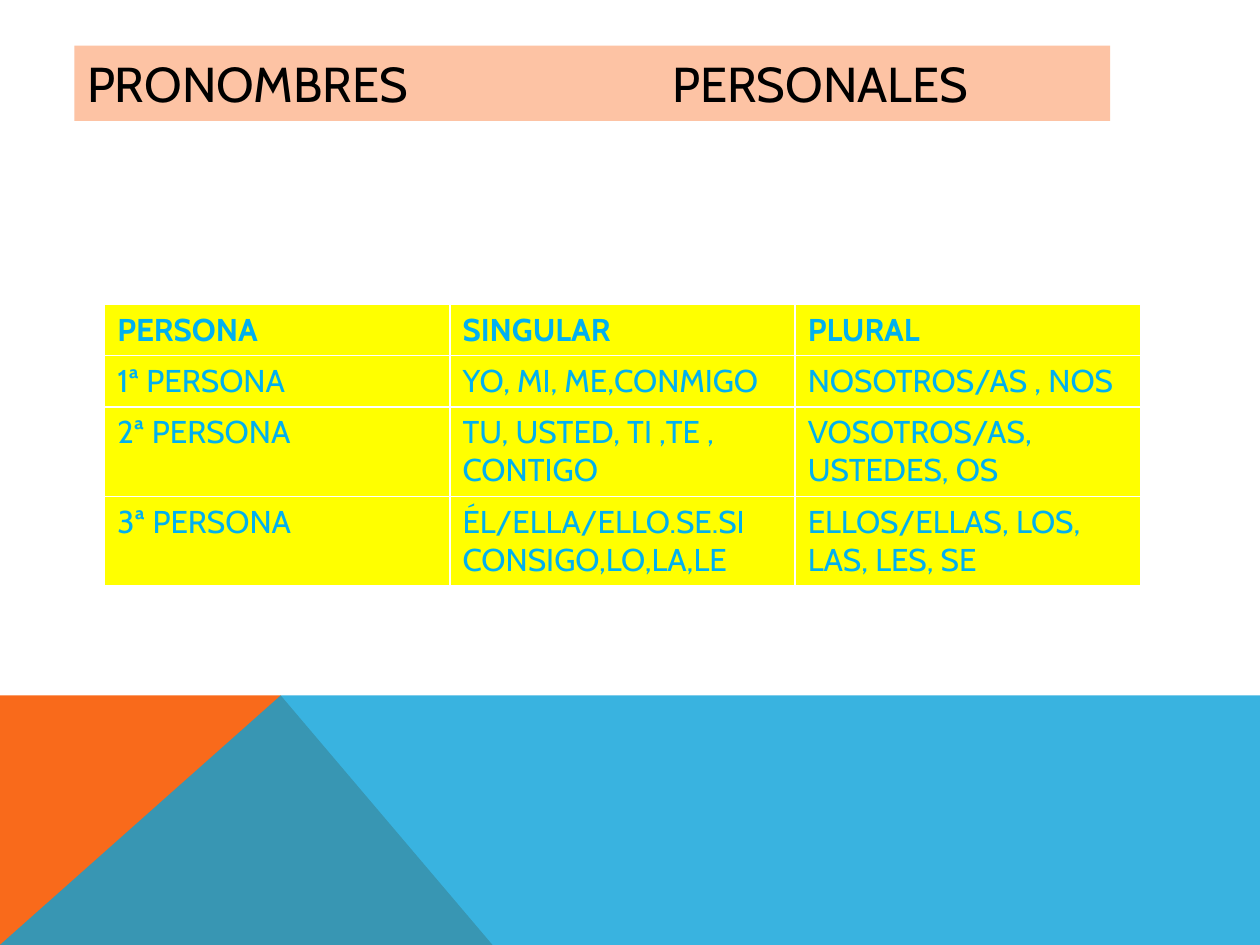
"""Build a slide with a table of Spanish personal pronouns."""
from dataclasses import dataclass

import lxml.etree
import pptx
import pptx.dml.color
import pptx.enum.text
import pptx.oxml.ns
import pptx.util

Cm = pptx.util.Cm
Pt = pptx.util.Pt
qn = pptx.oxml.ns.qn


@dataclass(frozen=True)
class Theme:
    font: str = "Cabin"
    head: int = 28
    body: int = 18
    black: str = "000000"
    peach: str = "FDC3A4"
    yellow: str = "FFFF00"
    sky: str = "00B0F0"
    orange: str = "F96A1B"
    blue: str = "08A1D9"


THEME = Theme()
WIDE, HIGH = 25.4, 19.05
PEAK, EDGE = 5.66, 14.02
ROWS = [
    ["PERSONA", "SINGULAR", "PLURAL"],
    ["1ª PERSONA", "YO, MI, ME,CONMIGO", "NOSOTROS/AS , NOS"],
    ["2ª PERSONA", "TU, USTED, TI ,TE , CONTIGO", "VOSOTROS/AS, USTEDES, OS"],
    ["3ª PERSONA", "ÉL/ELLA/ELLO.SE.SI\nCONSIGO,LO,LA,LE", "ELLOS/ELLAS, LOS, LAS, LES, SE"],
]
TALL = [1.03, 1.03, 1.78, 1.78]


def paint(fill, color):
    fill.solid()
    fill.fore_color.rgb = pptx.dml.color.RGBColor.from_string(color)


def write(para, text, size, color, bold=False):
    run = para.add_run()
    run.text = text
    run.font.name = THEME.font
    run.font.size = Pt(size)
    run.font.bold = bold
    run.font.color.rgb = pptx.dml.color.RGBColor.from_string(color)


def add_band(slide, points, color, alpha=100):
    spots = [(Cm(x), Cm(y)) for x, y in points]
    pen = slide.shapes.build_freeform(*spots[0])
    pen.add_line_segments(spots[1:], close=True)
    band = pen.convert_to_shape()
    band.shadow.inherit = False
    band.line.fill.background()
    paint(band.fill, color)
    if alpha < 100:
        tint = band._element.spPr.find(qn("a:solidFill"))[0]
        lxml.etree.SubElement(tint, qn("a:alpha"), val=str(alpha * 1000))


def add_title(slide, words, stop):
    title = slide.shapes.title
    title.left, title.top, title.width, title.height = Cm(1.5), Cm(0.92), Cm(20.88), Cm(1.52)
    paint(title.fill, THEME.peach)
    frame = title.text_frame
    frame.word_wrap = True
    frame.vertical_anchor = pptx.enum.text.MSO_ANCHOR.MIDDLE
    para = frame.paragraphs[0]
    para.alignment = pptx.enum.text.PP_ALIGN.LEFT
    tabs = lxml.etree.SubElement(para._p.get_or_add_pPr(), qn("a:tabLst"))
    lxml.etree.SubElement(tabs, qn("a:tab"), pos=str(Cm(stop)), algn="l")
    write(para, "\t".join(words), THEME.head, THEME.black)


def fill_cell(cell, text, bold):
    paint(cell.fill, THEME.yellow)
    frame = cell.text_frame
    for i, line in enumerate(text.split("\n")):
        para = frame.add_paragraph() if i else frame.paragraphs[0]
        write(para, line, THEME.body, THEME.sky, bold)


def add_grid(slide, rows, tall):
    shape = slide.shapes.add_table(
        len(rows), len(rows[0]), Cm(2.11), Cm(6.14), Cm(20.88), Cm(sum(tall)))
    grid = shape.table
    for r, (row, size) in enumerate(zip(rows, tall)):
        grid.rows[r].height = Cm(size)
        for c, text in enumerate(row):
            fill_cell(grid.cell(r, c), text, bold=r == 0)


def main():
    deck = pptx.Presentation()
    deck.slide_width, deck.slide_height = Cm(WIDE), Cm(HIGH)
    slide = deck.slides.add_slide(deck.slide_layouts[5])
    add_band(slide, [(0, HIGH), (0, EDGE), (PEAK, EDGE), (9.93, HIGH)], THEME.orange)
    add_band(slide, [(0, HIGH), (PEAK, EDGE), (WIDE, EDGE), (WIDE, HIGH)], THEME.blue, 80)
    add_title(slide, ["PRONOMBRES", "PERSONALES"], 11.8)
    add_grid(slide, ROWS, TALL)
    deck.save("out.pptx")


if __name__ == "__main__":
    main()
